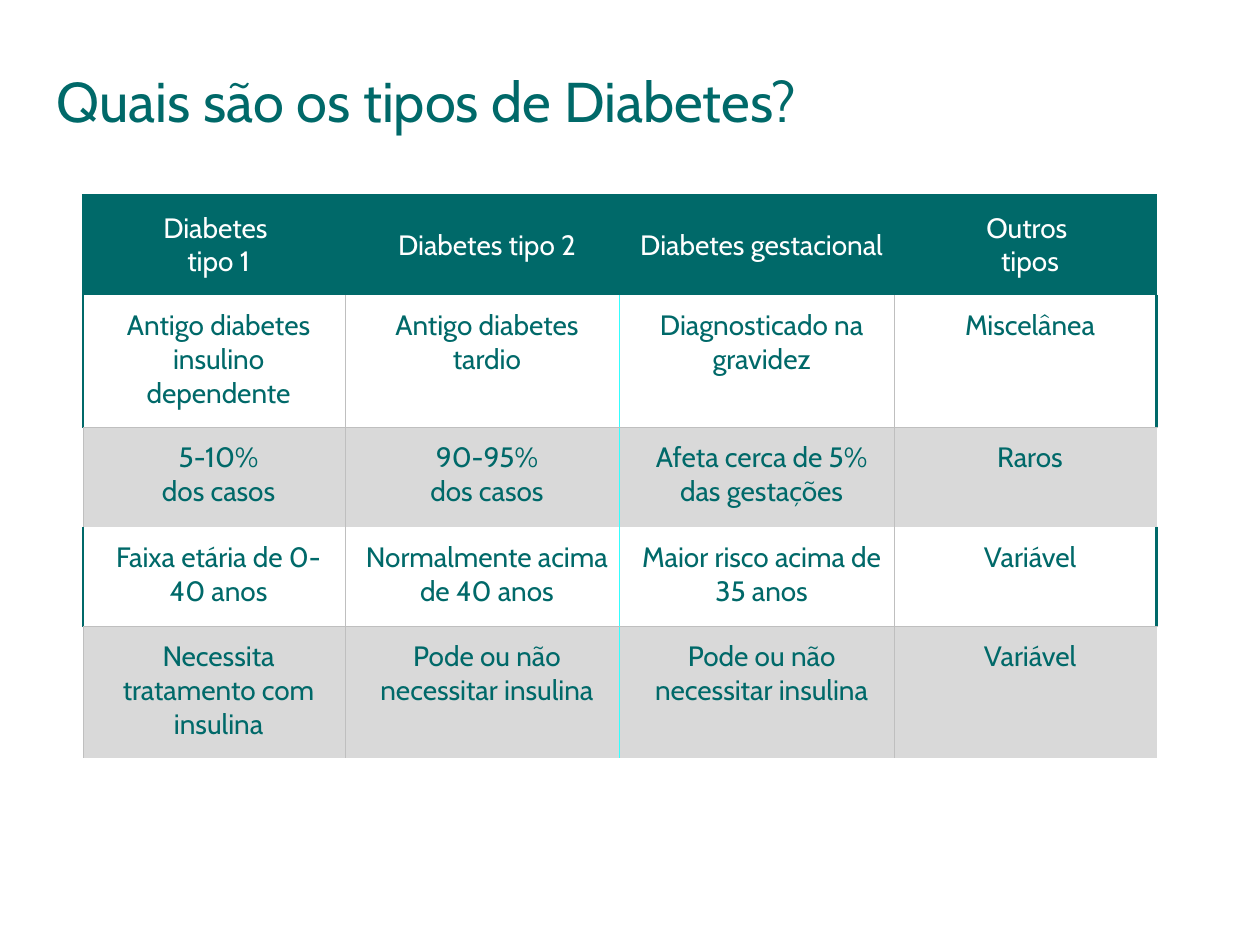
"""Build a slide with a table comparing the types of diabetes."""
from dataclasses import dataclass

from lxml import etree
from pptx import Presentation
from pptx import util as u
from pptx.dml import color
from pptx.enum import text as t
from pptx.oxml import ns


@dataclass(frozen=True)
class Theme:
    font: str = "Cabin"
    teal: str = "006969"
    white: str = "FFFFFF"
    band: str = "D9D9D9"
    rule: str = "BFBFBF"
    cyan: str = "34FFFF"
    title_size: int = 32
    cell_size: int = 16
    thin: float = 0.5
    thick: float = 1.5


theme = Theme()


def write(frame, content, size, ink, align=t.PP_ALIGN.LEFT):
    frame.word_wrap = True
    for index, line in enumerate(content.split("\n")):
        para = frame.paragraphs[0] if index == 0 else frame.add_paragraph()
        para.alignment = align
        span = para.add_run()
        span.text = line
        span.font.name = theme.font
        span.font.size = u.Pt(size)
        span.font.color.rgb = color.RGBColor.from_string(ink)


def add_border(cell, side, ink):
    properties = cell._tc.get_or_add_tcPr()
    line = etree.SubElement(properties, ns.qn(f"a:ln{side}"))
    if ink is None:
        etree.SubElement(line, ns.qn("a:noFill"))
        return
    width = theme.thick if ink == theme.teal else theme.thin
    line.set("w", str(u.Pt(width)))
    fill = etree.SubElement(line, ns.qn("a:solidFill"))
    etree.SubElement(fill, ns.qn("a:srgbClr"), val=ink)


deck = Presentation()
deck.slide_width, deck.slide_height = u.Inches(10), u.Inches(7.5)
page = deck.slides.add_slide(deck.slide_layouts[6])

title = page.shapes.add_textbox(u.Inches(0.35), u.Inches(0.44), u.Inches(8.27), u.Inches(0.71))
title.text_frame.vertical_anchor = t.MSO_ANCHOR.MIDDLE
write(title.text_frame, "Quais são os tipos de Diabetes?", theme.title_size, theme.teal)

rows = [
    ["Diabetes \ntipo 1", "Diabetes tipo 2", "Diabetes gestacional", "Outros \ntipos"],
    ["Antigo diabetes insulino dependente", "Antigo diabetes tardio",
     "Diagnosticado na gravidez", "Miscelânea"],
    ["5-10%\ndos casos", "90-95%\ndos casos", "Afeta cerca de 5% das gestações", "Raros"],
    ["Faixa etária de 0-40 anos", "Normalmente acima de 40 anos",
     "Maior risco acima de 35 anos", "Variável"],
    ["Necessita tratamento com insulina", "Pode ou não necessitar insulina",
     "Pode ou não necessitar insulina", "Variável"],
]
widths = [2.08, 2.18, 2.18, 2.08]
heights = [0.79, 1.05, 0.79, 0.79, 1.05]

table = page.shapes.add_table(
    len(rows), len(widths), u.Inches(0.66), u.Inches(1.55),
    u.Inches(sum(widths)), u.Inches(sum(heights))).table
for column, width in zip(table.columns, widths):
    column.width = u.Inches(width)
for row, height in zip(table.rows, heights):
    row.height = u.Inches(height)

horizontals = [theme.teal, None, theme.rule, None, theme.rule, None]
header_verticals = [theme.teal, None, None, None, None]
plain_verticals = [theme.teal, theme.rule, theme.cyan, theme.rule, theme.teal]
band_verticals = [theme.rule, theme.rule, theme.cyan, theme.rule, None]

for row_index, labels in enumerate(rows):
    is_header = row_index == 0
    is_band = not is_header and row_index % 2 == 0
    verticals = header_verticals if is_header else band_verticals if is_band else plain_verticals
    for column_index, label in enumerate(labels):
        cell = table.cell(row_index, column_index)
        cell.margin_left, cell.margin_right = u.Inches(0.15), u.Inches(0.08)
        cell.margin_top = cell.margin_bottom = u.Inches(0.11)
        cell.vertical_anchor = t.MSO_ANCHOR.MIDDLE if is_header else t.MSO_ANCHOR.TOP
        add_border(cell, "L", verticals[column_index])
        add_border(cell, "R", verticals[column_index + 1])
        add_border(cell, "T", horizontals[row_index])
        add_border(cell, "B", horizontals[row_index + 1])
        if is_header or is_band:
            cell.fill.solid()
            cell.fill.fore_color.rgb = color.RGBColor.from_string(
                theme.teal if is_header else theme.band)
        else:
            cell.fill.background()
        write(cell.text_frame, label, theme.cell_size,
              theme.white if is_header else theme.teal, t.PP_ALIGN.CENTER)

deck.save("out.pptx")
